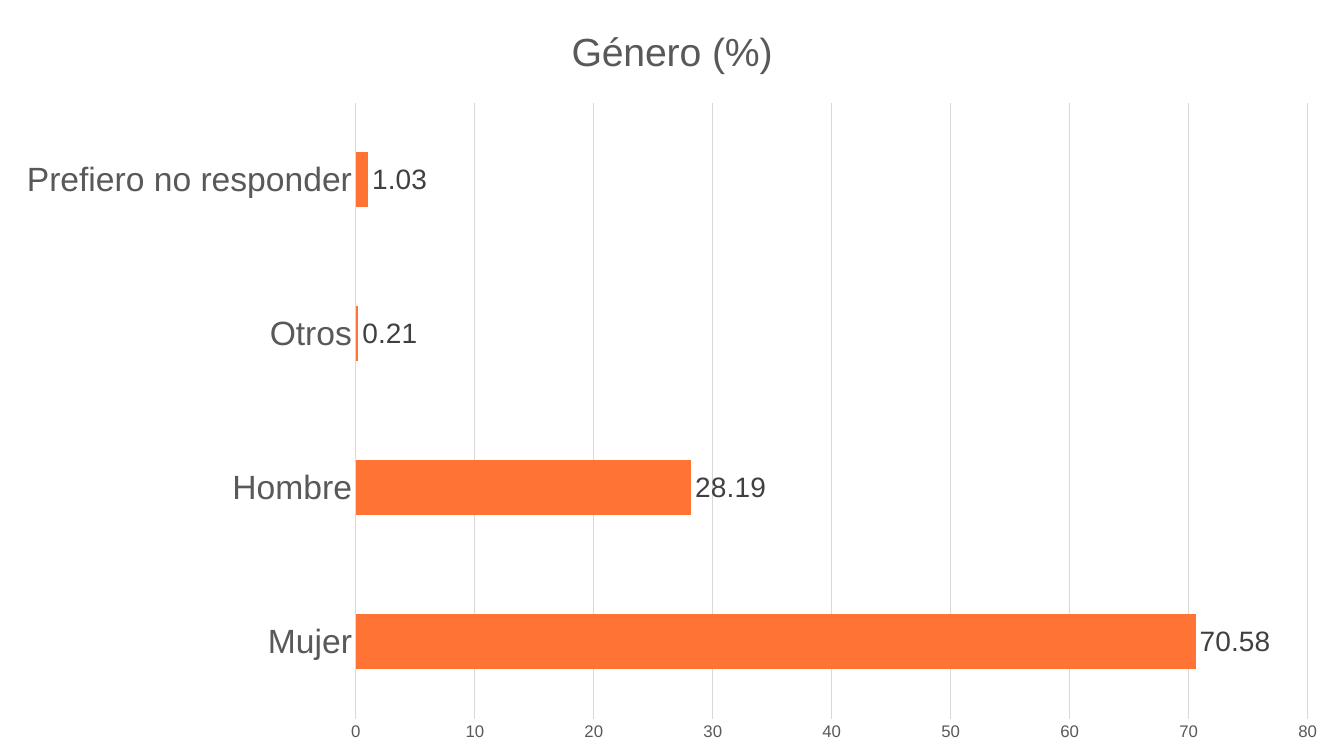
from lxml.etree import Element, SubElement
from pptx import Presentation
from pptx.chart.data import CategoryChartData
from pptx.dml.color import RGBColor
from pptx.enum.chart import XL_CHART_TYPE, XL_LABEL_POSITION, XL_TICK_MARK
from pptx.oxml.ns import qn
from pptx.util import Inches, Pt

TITLE = "Género (%)"
GENDER_SHARES = {
    "Mujer": 70.58,
    "Hombre": 28.19,
    "Otros": 0.21,
    "Prefiero no responder": 1.03,
}
SLIDE_WIDTH, SLIDE_HEIGHT = Inches(13.33), Inches(7.5)
PLOT_LEFT, PLOT_TOP = Inches(3.53), Inches(1.02)
PLOT_WIDTH, PLOT_HEIGHT = Inches(9.44), Inches(6.11)

WHITE = RGBColor(0xFF, 0xFF, 0xFF)
ORANGE = RGBColor(0xFF, 0x73, 0x34)
TEXT_GRAY = RGBColor(0x59, 0x59, 0x59)
LABEL_GRAY = RGBColor(0x40, 0x40, 0x40)
LINE_GRAY = RGBColor(0xD9, 0xD9, 0xD9)


def style_font(font, size, color):
    font.name = "Arial"
    font.size = Pt(size)
    font.bold = False
    font.color.rgb = color


def style_line(line):
    line.color.rgb = LINE_GRAY
    line.width = Pt(0.75)


def place_plot(chart):
    plot_area = chart._chartSpace.chart.plotArea
    layout = plot_area.find(qn("c:layout"))
    if layout is None:
        layout = Element(qn("c:layout"))
        plot_area.insert(0, layout)
    manual = SubElement(layout, qn("c:manualLayout"))
    settings = {
        "layoutTarget": "inner",
        "xMode": "edge",
        "yMode": "edge",
        "x": PLOT_LEFT / SLIDE_WIDTH,
        "y": PLOT_TOP / SLIDE_HEIGHT,
        "w": PLOT_WIDTH / SLIDE_WIDTH,
        "h": PLOT_HEIGHT / SLIDE_HEIGHT,
    }
    for tag, value in settings.items():
        SubElement(manual, qn(f"c:{tag}")).set("val", str(value))


def fill_chart_area(chart, color):
    area = Element(qn("c:spPr"))
    fill = SubElement(area, qn("a:solidFill"))
    SubElement(fill, qn("a:srgbClr")).set("val", str(color))
    SubElement(SubElement(area, qn("a:ln")), qn("a:noFill"))
    chart._chartSpace.chart.addnext(area)


presentation = Presentation()
presentation.slide_width = SLIDE_WIDTH
presentation.slide_height = SLIDE_HEIGHT
slide = presentation.slides.add_slide(presentation.slide_layouts[6])

gender_data = CategoryChartData()
gender_data.categories = list(GENDER_SHARES)
gender_data.add_series("Series 1", list(GENDER_SHARES.values()))
chart = slide.shapes.add_chart(
    XL_CHART_TYPE.BAR_CLUSTERED, 0, 0, SLIDE_WIDTH, SLIDE_HEIGHT, gender_data
).chart
style_font(chart.font, 10, RGBColor(0, 0, 0))
chart.has_legend = False
chart.has_title = True
title_frame = chart.chart_title.text_frame
title_frame.text = TITLE
style_font(title_frame.paragraphs[0].runs[0].font, 28, TEXT_GRAY)
chart.chart_title.include_in_layout = False
place_plot(chart)
fill_chart_area(chart, WHITE)

for axis, size in ((chart.category_axis, 24), (chart.value_axis, 12)):
    axis.major_tick_mark = XL_TICK_MARK.NONE
    axis.minor_tick_mark = XL_TICK_MARK.NONE
    style_font(axis.tick_labels.font, size, TEXT_GRAY)
style_line(chart.category_axis.format.line)
chart.value_axis.format.line.fill.background()
chart.value_axis.minimum_scale = 0
chart.value_axis.maximum_scale = 80
chart.value_axis.major_unit = 10
style_line(chart.value_axis.major_gridlines.format.line)

plot = chart.plots[0]
plot.gap_width = 182
plot.vary_by_categories = False
shares = plot.series[0]
shares.format.fill.solid()
shares.format.fill.fore_color.rgb = ORANGE
labels = shares.data_labels
labels.show_value = True
labels.position = XL_LABEL_POSITION.OUTSIDE_END
style_font(labels.font, 20, LABEL_GRAY)

presentation.save("out.pptx")
